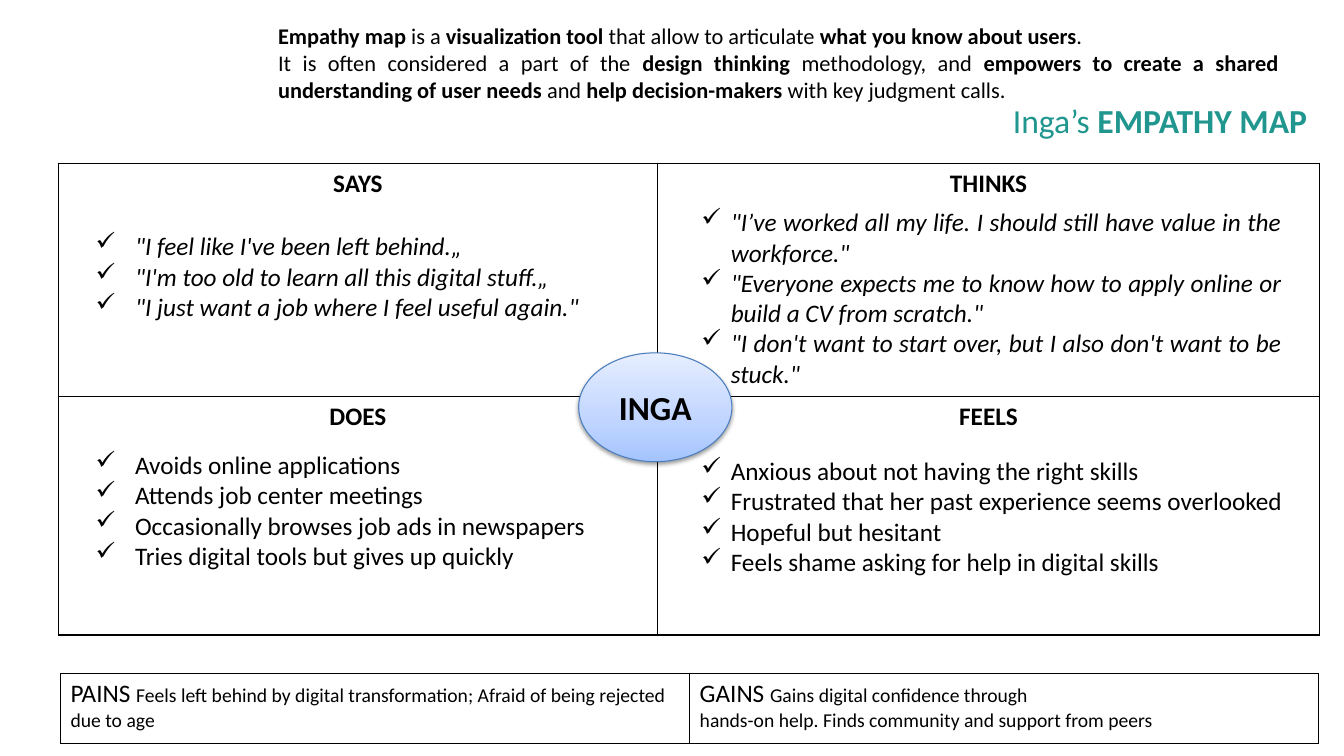
import pptx
import pptx.util
import pptx.dml.color
import pptx.enum.shapes
import pptx.enum.text
import pptx.oxml.ns
import copy
import lxml.etree

COLORS = {
    "text": "000000", "title": "21968F", "border": "000000", "outline": "4B7EBC",
    "deep": "A4C4FF", "middle": "BFD4FF", "pale": "E6EEFF",
}
ALIGN = pptx.enum.text.PP_ALIGN
ANCHOR = pptx.enum.text.MSO_ANCHOR
rgb = pptx.dml.color.RGBColor.from_string
qn = pptx.oxml.ns.qn

deck = pptx.Presentation()
deck.slide_width = pptx.util.Inches(13.33)
deck.slide_height = pptx.util.Inches(7.5)
page = deck.slides.add_slide(deck.slide_layouts[6])

# The grid has 100 columns and 100 rows.
COLUMN = deck.slide_width / 100
ROW = deck.slide_height / 100


def place(left, top, width, height):
    """Turn grid columns and rows into slide lengths."""
    return int(left * COLUMN), int(top * ROW), int(width * COLUMN), int(height * ROW)


def write(frame, paragraphs, align=ALIGN.LEFT, indent=0, **base):
    """Fill a frame with paragraphs of (text, format) spans; an indent adds check marks."""
    frame.word_wrap = True
    for index, spans in enumerate(paragraphs):
        para = frame.paragraphs[0] if index == 0 else frame.add_paragraph()
        para.alignment = align
        if indent:
            properties = para._p.get_or_add_pPr()
            properties.set("marL", str(int(indent * COLUMN)))
            properties.set("indent", str(int(-indent * COLUMN)))
            lxml.etree.SubElement(properties, qn("a:buChar"), char="✓")
        for text, extra in spans:
            span = para.add_run()
            span.text = text
            look = {"name": "Calibri", "size": 18, "color": "text", **base, **extra}
            span.font.color.rgb = rgb(COLORS[look.pop("color")])
            look["size"] = pptx.util.Pt(look["size"])
            for key, value in look.items():
                setattr(span.font, key, value)


BOLD = {"bold": True}
SMALL = {"size": 14}

# Title
title = page.shapes.add_textbox(*place(74.49, 12.13, 23.63, 7.6)).text_frame
title.vertical_anchor = ANCHOR.MIDDLE
write(title, [[("Inga’s ", {}), ("EMPATHY MAP", BOLD)]], ALIGN.CENTER, size=24, color="title")

# Empathy map and the pains and gains below it
tables = [
    {
        "corner": (4.35, 21.6), "columns": [44.56, 49.29], "rows": [30.8, 31.6],
        "align": ALIGN.CENTER, "base": BOLD,
        "cells": [
            [[[("SAYS", {})]], [[("THINKS", {})]]],
            [[[("DOES", {})]], [[("FEELS", {})]]],
        ],
    },
    {
        "corner": (4.5, 89.07), "columns": [46.81, 46.81], "rows": [9.33],
        "align": ALIGN.LEFT, "base": {},
        "cells": [[
            [[("PAINS ", {}),
              ("Feels left behind by digital transformation; Afraid of being rejected due to age",
               SMALL)]],
            [[("GAINS ", {}), ("Gains digital confidence through", SMALL)],
             [("hands-on help. Finds community and support from peers", SMALL)]],
        ]],
    },
]
for entry in tables:
    widths, heights = entry["columns"], entry["rows"]
    area = place(*entry["corner"], sum(widths), sum(heights))
    table = page.shapes.add_table(len(heights), len(widths), *area).table
    table.first_row = table.horz_banding = False
    for column, width in zip(table.columns, widths):
        column.width = int(width * COLUMN)
    for row, height, contents in zip(table.rows, heights, entry["cells"]):
        row.height = int(height * ROW)
        for cell, paragraphs in zip(row.cells, contents):
            write(cell.text_frame, paragraphs, entry["align"], **entry["base"])
            properties = cell._tc.get_or_add_tcPr()
            for side in ("a:lnL", "a:lnR", "a:lnT", "a:lnB"):
                border = lxml.etree.SubElement(properties, qn(side), w=str(pptx.util.Pt(1)))
                paint = lxml.etree.SubElement(border, qn("a:solidFill"))
                lxml.etree.SubElement(paint, qn("a:srgbClr"), val=COLORS["border"])
            cell.fill.background()

# Persona in the middle of the map
persona = page.shapes.add_shape(
    pptx.enum.shapes.MSO_SHAPE.OVAL, *place(43.06, 46.67, 11.4, 14.4))
persona.fill.gradient()
persona.fill.gradient_angle = 90
stops = persona._element.spPr.find(".//" + qn("a:gsLst"))
stops.append(copy.deepcopy(stops[0]))
shades = [(0, "deep"), (0.35, "middle"), (1, "pale")]
for stop, (position, shade) in zip(persona.fill.gradient_stops, shades):
    stop.position = position
    stop.color.rgb = rgb(COLORS[shade])
persona.line.color.rgb = rgb(COLORS["outline"])
persona.line.width = pptx.util.Pt(0.75)
persona.shadow.inherit = False
shadow = lxml.etree.SubElement(
    persona._element.spPr.find(qn("a:effectLst")), qn("a:outerShdw"),
    blurRad=str(pptx.util.Pt(3.1)), dist=str(pptx.util.Pt(1.6)), dir="5400000", rotWithShape="0")
shadow_color = lxml.etree.SubElement(shadow, qn("a:srgbClr"), val=COLORS["text"])
lxml.etree.SubElement(shadow_color, qn("a:alpha"), val="38000")
persona.text_frame.vertical_anchor = ANCHOR.MIDDLE
write(persona.text_frame, [[("INGA", BOLD)]], ALIGN.CENTER, size=24)

# Check lists in the four quadrants: area, indent, alignment, italic, lines
LEFT_INDENT, RIGHT_INDENT = 2.93, 2.18
quadrants = [
    ((51.46, 26.67, 44.64, 25.6), RIGHT_INDENT, ALIGN.JUSTIFY, True, [
        "\"I’ve worked all my life. I should still have value in the workforce.\"",
        "\"Everyone expects me to know how to apply online or build a CV from scratch.\"",
        "\"I don't want to start over, but I also don't want to be stuck.\"",
    ]),
    ((51.46, 59.6, 45.46, 17.47), RIGHT_INDENT, ALIGN.LEFT, False, [
        "Anxious about not having the right skills",
        "Frustrated that her past experience seems overlooked",
        "Hopeful but hesitant",
        "Feels shame asking for help in digital skills",
    ]),
    ((6.38, 58.8, 39.38, 17.47), LEFT_INDENT, ALIGN.LEFT, False, [
        "Avoids online applications",
        "Attends job center meetings",
        "Occasionally browses job ads in newspapers",
        "Tries digital tools but gives up quickly",
    ]),
    ((6.38, 29.87, 38.71, 13.47), LEFT_INDENT, ALIGN.LEFT, True, [
        "\"I feel like I've been left behind.„",
        "\"I'm too old to learn all this digital stuff.„",
        "\"I just want a job where I feel useful again.\"",
    ]),
]
for area, indent, align, italic, lines in quadrants:
    box = page.shapes.add_textbox(*place(*area))
    write(box.text_frame, [[(line, {})] for line in lines], align, indent, italic=italic)

# Introduction
intro = page.shapes.add_textbox(*place(19.95, 2.27, 75.92, 12.13))
write(intro.text_frame, [
    [("Empathy map ", BOLD), ("is a ", {}), ("visualization tool ", BOLD),
     ("that allow to articulate ", {}), ("what you know about users", BOLD), (".", {})],
    [("It is often considered a part of the ", {}), ("design thinking ", BOLD),
     ("methodology, and ", {}),
     ("empowers to create a shared understanding of user needs ", BOLD),
     ("and ", {}), ("help decision-makers ", BOLD), ("with key judgment calls.", {})],
], ALIGN.JUSTIFY, size=16)

deck.save("out.pptx")
